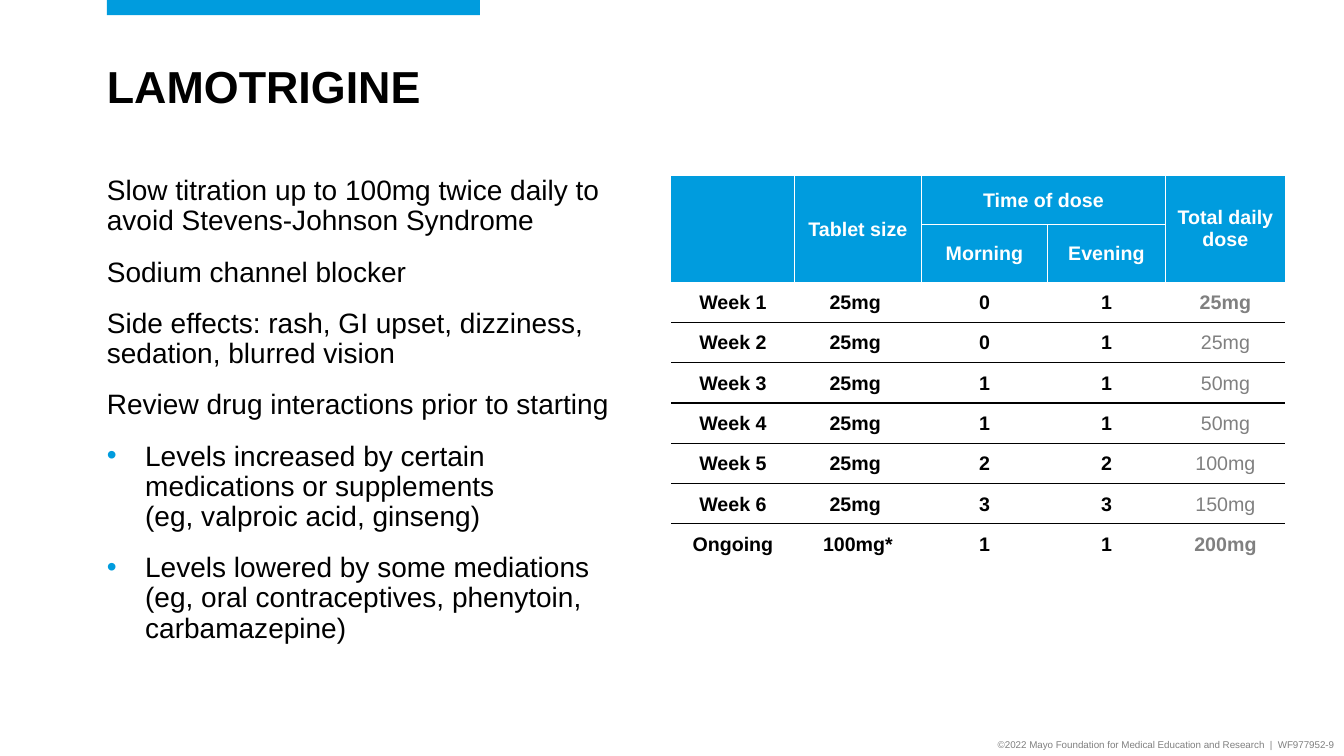
from lxml.etree import SubElement
from pptx import Presentation
from pptx.dml.color import RGBColor
from pptx.enum.shapes import MSO_SHAPE
from pptx.enum.text import MSO_ANCHOR, PP_ALIGN
from pptx.oxml.ns import qn
from pptx.util import Inches, Pt

BLUE, BLACK, WHITE, GRAY = "009CDE", "000000", "FFFFFF", "808080"
TITLE = "LAMOTRIGINE"
FOOTER = "©2022 Mayo Foundation for Medical Education and Research  |  WF977952-9"
POINTS = [
    "Slow titration up to 100mg twice daily to avoid Stevens-Johnson Syndrome",
    "Sodium channel blocker",
    "Side effects: rash, GI upset, dizziness, sedation, blurred vision",
    "Review drug interactions prior to starting",
]
BULLETS = [
    "Levels increased by certain medications or supplements\v(eg, valproic acid, ginseng)",
    "Levels lowered by some mediations (eg, oral contraceptives, phenytoin, carbamazepine)",
]
HEAD = [
    ["", "Tablet size", "Time of dose", "", "Total daily dose"],
    ["", "", "Morning", "Evening", ""],
]
DOSES = [
    ["Week 1", "25mg ", "0", "1", "25mg"],
    ["Week 2", "25mg ", "0", "1", "25mg"],
    ["Week 3", "25mg ", "1", "1", "50mg"],
    ["Week 4", "25mg ", "1", "1", "50mg"],
    ["Week 5", "25mg ", "2", "2", "100mg"],
    ["Week 6", "25mg ", "3", "3", "150mg"],
    ["Ongoing", "100mg*", "1", "1", "200mg"],
]
MERGES = [((0, 0), (1, 0)), ((0, 1), (1, 1)), ((0, 2), (0, 3)), ((0, 4), (1, 4))]
WIDTHS = [1.22, 1.26, 1.25, 1.17, 1.19]
HEIGHTS = [0.48] * len(HEAD) + [0.4] * len(DOSES)
NO_STYLE = "{2D5ABB26-0587-4C30-8999-92F81FD0307C}"


def color(code):
    return RGBColor.from_string(code)


def write(para, text, size=20, ink=BLACK, bold=False, align=PP_ALIGN.LEFT,
          line=None, before=None):
    para.text = text
    para.alignment = align
    if line:
        para.line_spacing = line
    if before:
        para.space_before = Pt(before)
    for run in para.runs:
        font = run.font
        font.name, font.size, font.bold = "Arial", Pt(size), bold
        font.color.rgb = color(ink)


def add_box(slide, place, insets, anchor=MSO_ANCHOR.TOP):
    frame = slide.shapes.add_textbox(*map(Inches, place)).text_frame
    frame.word_wrap = True
    frame.vertical_anchor = anchor
    set_insets(frame, insets)
    return frame


def set_insets(item, insets):
    """Set left, top, right and bottom margins of a text frame or a cell."""
    (item.margin_left, item.margin_top,
     item.margin_right, item.margin_bottom) = map(Inches, insets)


def add_bullet(para):
    props = para._p.get_or_add_pPr()
    props.set("marL", str(Inches(0.38)))
    props.set("indent", str(-Inches(0.38)))
    tint = SubElement(props, qn("a:buClr"))
    SubElement(tint, qn("a:srgbClr"), val=BLUE)
    SubElement(props, qn("a:buFont"), typeface="Arial")
    SubElement(props, qn("a:buChar"), char="•")


def set_edges(cell, edges):
    """Draw each cell side (L, R, T, B) in its colour, or leave it bare."""
    props = cell._tc.get_or_add_tcPr()
    for spot, side in enumerate("LRTB"):
        line = SubElement(props, qn("a:ln" + side), w=str(Pt(1)))
        props.remove(line)
        props.insert(spot, line)
        if side in edges:
            fill = SubElement(line, qn("a:solidFill"))
            SubElement(fill, qn("a:srgbClr"), val=edges[side])
        else:
            SubElement(line, qn("a:noFill"))


def style_cell(cell, row, col, text):
    head = row < len(HEAD)
    last_col, last_row = len(WIDTHS) - 1, len(HEIGHTS) - 1
    total = col == last_col and not head
    wide = head and (row == 0 or col in (0, 1, last_col))
    set_insets(cell, (0.1, 0.05, 0.1, 0.05) if wide else (0.01, 0.01, 0.01, 0))
    cell.vertical_anchor = MSO_ANCHOR.MIDDLE
    write(cell.text_frame.paragraphs[0], text, size=14, align=PP_ALIGN.CENTER,
          ink=WHITE if head else GRAY if total else BLACK,
          bold=not total or row in (len(HEAD), last_row))
    edges = {}
    if head:
        cell.fill.solid()
        cell.fill.fore_color.rgb = color(BLUE)
        if col > 0:
            edges["L"] = WHITE
        if col < last_col:
            edges["R"] = WHITE
        if col in (2, 3):
            edges["B" if row == 0 else "T"] = WHITE
    else:
        cell.fill.background()
        if row > len(HEAD):
            edges["T"] = BLACK
        if row < last_row:
            edges["B"] = BLACK
    set_edges(cell, edges)


def add_doses(slide):
    frame = slide.shapes.add_table(
        len(HEIGHTS), len(WIDTHS), Inches(6.66), Inches(1.75),
        Inches(sum(WIDTHS)), Inches(sum(HEIGHTS)))
    table = frame.table
    table.first_row = table.horz_banding = False
    next(frame._element.iter(qn("a:tableStyleId"))).text = NO_STYLE
    for col, width in zip(table.columns, WIDTHS):
        col.width = Inches(width)
    for row, height in zip(table.rows, HEIGHTS):
        row.height = Inches(height)
    for start, end in MERGES:
        table.cell(*start).merge(table.cell(*end))
    for row, texts in enumerate(HEAD + DOSES):
        for col, text in enumerate(texts):
            style_cell(table.cell(row, col), row, col, text)


def main():
    deck = Presentation()
    deck.slide_width, deck.slide_height = Inches(13.33), Inches(7.5)
    slide = deck.slides.add_slide(deck.slide_layouts[6])

    foot = add_box(slide, (9.21, 7.28, 4.12, 0.22), (0.1, 0.05, 0.1, 0.05),
                   MSO_ANCHOR.MIDDLE)
    write(foot.paragraphs[0], FOOTER, size=7, ink=GRAY, align=PP_ALIGN.RIGHT)

    bar = slide.shapes.add_shape(
        MSO_SHAPE.RECTANGLE, *map(Inches, (1.06, 0, 3.7, 0.15)))
    bar.shadow.inherit = False
    bar.fill.solid()
    bar.fill.fore_color.rgb = color(BLUE)
    bar.line.fill.background()

    title = add_box(slide, (1.06, 0.59, 4.01, 1.16), (0, 0.05, 0, 0.05))
    write(title.paragraphs[0], TITLE, size=32, bold=True, line=0.9)

    body = add_box(slide, (1.06, 1.75, 5.22, 5.18), (0, 0, 0, 0.05))
    for i, text in enumerate(POINTS + BULLETS):
        para = body.add_paragraph() if i else body.paragraphs[0]
        write(para, text, line=0.9, before=15 if i else None)
        if text in BULLETS:
            add_bullet(para)

    add_doses(slide)
    deck.save("out.pptx")


if __name__ == "__main__":
    main()
